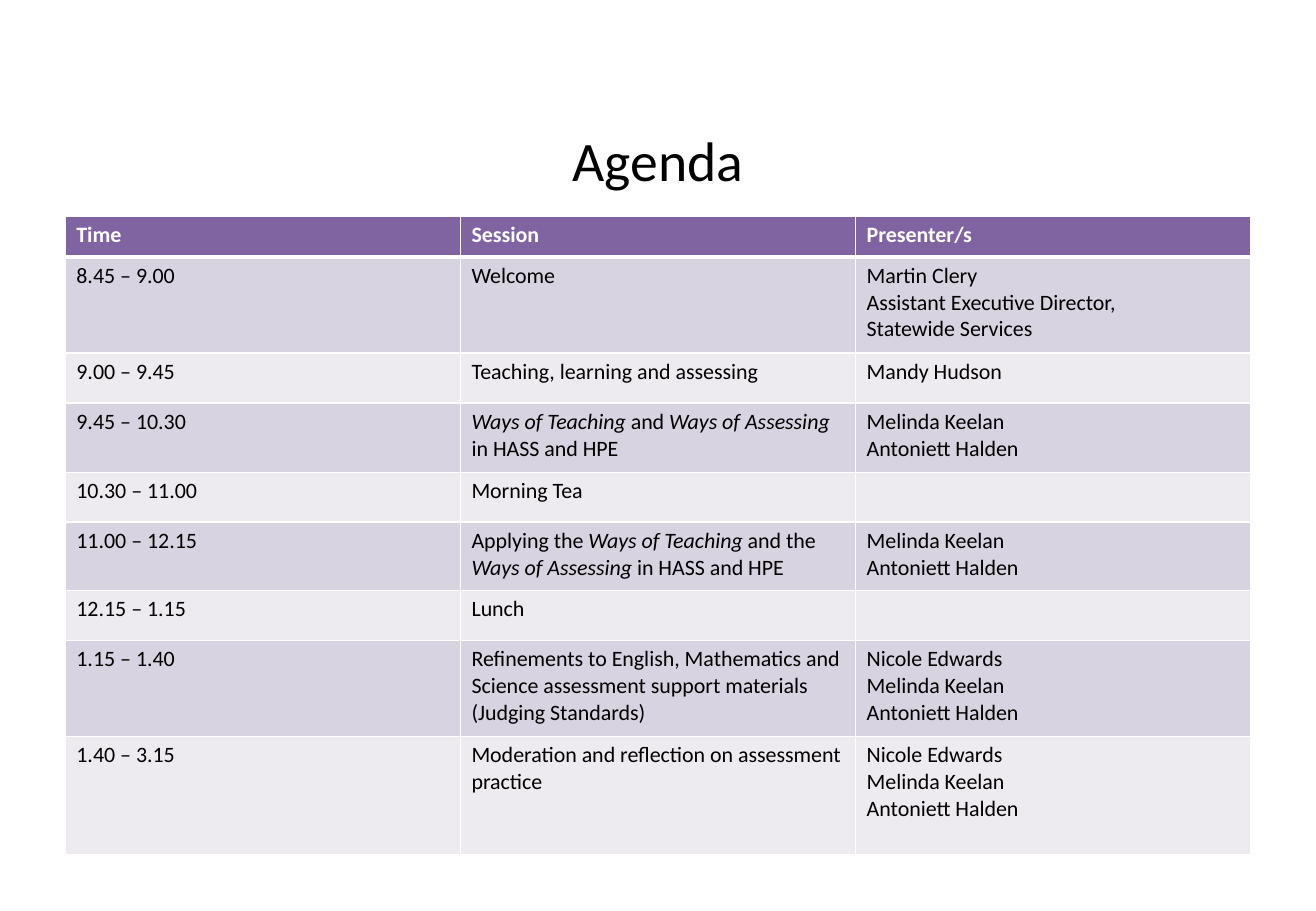
from lxml.etree import SubElement as Sub
from pptx import Presentation
from pptx.dml.color import RGBColor as RGB
from pptx.enum.text import MSO_ANCHOR as Anchor, PP_ALIGN as Align
from pptx.oxml.ns import qn
from pptx.util import Pt


class Theme:
    font = "Calibri"
    head = RGB(0x80, 0x64, 0xA2)
    bands = RGB(0xD8, 0xD3, 0xE0), RGB(0xED, 0xEA, 0xF0)
    black = RGB(0, 0, 0)
    white = RGB(255, 255, 255)
    title = Pt(33)
    body = Pt(13)
    thin, thick = Pt(1), Pt(3)


def style(para, size, color, bold=False):
    font = para.font
    font.name, font.size, font.bold = Theme.font, size, bold
    font.color.rgb = color


def edge(cell, side, width):
    line = Sub(cell._tc.get_or_add_tcPr(), qn(f"a:ln{side}"), w=str(width))
    fill = Sub(line, qn("a:solidFill"))
    Sub(fill, qn("a:srgbClr"), val=str(Theme.white))


# Agenda: asterisks enclose italics, line breaks part paragraphs
pair = "Melinda Keelan\nAntoniett Halden"
trio = "Nicole Edwards\n" + pair
agenda = [
    (24, "Time", "Session", "Presenter/s"),
    (57, "8.45 – 9.00", "Welcome",
     "Martin Clery\nAssistant Executive Director,\nStatewide Services"),
    (29.6, "9.00 – 9.45", "Teaching, learning and assessing", "Mandy Hudson"),
    (41, "9.45 – 10.30",
     "*Ways of Teaching *and *Ways of Assessing *in HASS and HPE", pair),
    (29.6, "10.30 – 11.00", "Morning Tea", ""),
    (40.4, "11.00 – 12.15",
     "Applying the *Ways of Teaching *and the *Ways of Assessing *"
     "in HASS and HPE", pair),
    (29.6, "12.15 – 1.15", "Lunch", ""),
    (57, "1.15 – 1.40",
     "Refinements to English, Mathematics and Science assessment "
     "support materials (Judging Standards)", trio),
    (70.2, "1.40 – 3.15",
     "Moderation and reflection on assessment practice", trio),
]

# Slide
deck = Presentation()
deck.slide_width, deck.slide_height = Pt(780), Pt(540)
slide = deck.slides.add_slide(deck.slide_layouts[5])

# Title
title = slide.shapes.title
title.left, title.top, title.width, title.height = Pt(39), Pt(60.5), Pt(702), Pt(68)
frame = title.text_frame
frame.text = "Agenda"
frame.vertical_anchor = Anchor.MIDDLE
frame.paragraphs[0].alignment = Align.CENTER
style(frame.paragraphs[0], Theme.title, Theme.black)

# Table
table = slide.shapes.add_table(
    len(agenda), 3, Pt(38.8), Pt(128.4), Pt(702.6),
    Pt(sum(row[0] for row in agenda))).table

for r, (height, *texts) in enumerate(agenda):
    table.rows[r].height = Pt(height)
    for c, text in enumerate(texts):
        cell = table.cell(r, c)
        cell.margin_left = cell.margin_right = Pt(6.5)
        cell.margin_top = cell.margin_bottom = Pt(3.25)

        # Borders, heavier under the header, then fill
        for side in "LRTB":
            heavy = (r, side) in [(0, "B"), (1, "T")]
            edge(cell, side, Theme.thick if heavy else Theme.thin)
        cell.fill.solid()
        cell.fill.fore_color.rgb = Theme.bands[(r - 1) % 2] if r else Theme.head

        # Text
        for n, line in enumerate(text.split("\n")):
            frame = cell.text_frame
            para = frame.add_paragraph() if n else frame.paragraphs[0]
            style(para, Theme.body, Theme.black if r else Theme.white, r == 0)
            for k, part in enumerate(line.split("*")):
                if part:
                    run = para.add_run()
                    run.text = part
                    if k % 2:
                        run.font.italic = True

deck.save("out.pptx")
